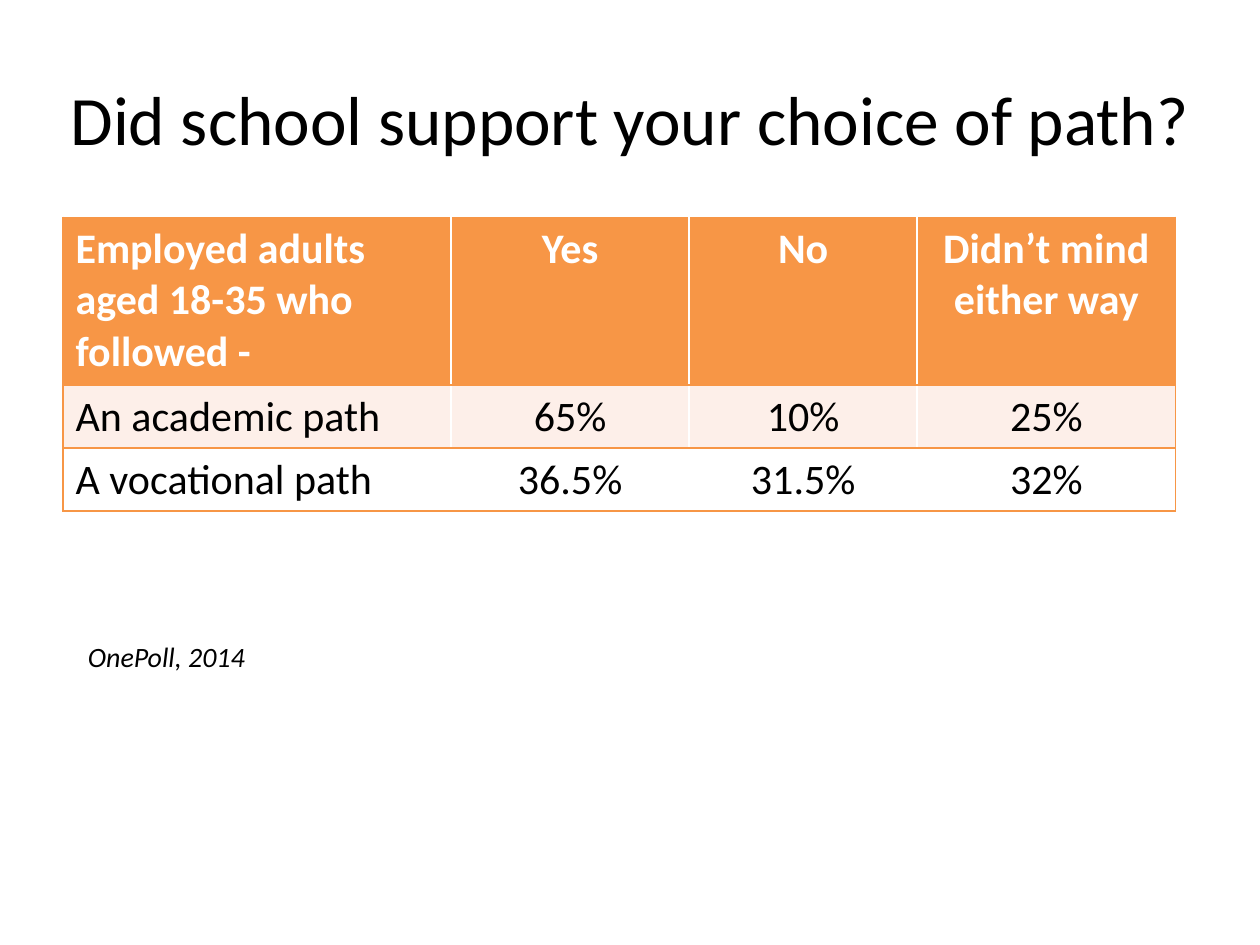
from dataclasses import dataclass

from lxml import etree
from pptx import Presentation
from pptx.dml.color import RGBColor
from pptx.enum.text import MSO_ANCHOR, PP_ALIGN
from pptx.oxml.ns import qn
from pptx.util import Emu, Inches, Pt

LEFT = PP_ALIGN.LEFT
CENTER = PP_ALIGN.CENTER
TOP = MSO_ANCHOR.TOP
MIDDLE = MSO_ANCHOR.MIDDLE

SLIDE_WIDTH = Inches(10)
SLIDE_HEIGHT = Inches(7.5)
FONT_NAME = "Calibri"
COLORS = {
    "orange": "F79646",
    "tint": "FDEFE9",
    "white": "FFFFFF",
    "black": "000000",
}


@dataclass(frozen=True)
class Area:
    left: float
    top: float
    width: float
    height: float

    def lengths(self) -> tuple[Emu, Emu, Emu, Emu]:
        return (
            Emu(round(self.left * SLIDE_WIDTH)),
            Emu(round(self.top * SLIDE_HEIGHT)),
            Emu(round(self.width * SLIDE_WIDTH)),
            Emu(round(self.height * SLIDE_HEIGHT)),
        )


@dataclass(frozen=True)
class TextBlock:
    text: str
    area: Area
    size: float
    alignment: PP_ALIGN
    anchor: MSO_ANCHOR
    italic: bool = False


@dataclass(frozen=True)
class SurveyRow:
    cells: tuple[str, ...]
    height: float
    fill: str
    color: str
    bold: bool = False


TEXT_BLOCKS = (
    TextBlock("Did school support your choice of path?",
              Area(0, 0.04, 1, 0.17), 39.6, CENTER, MIDDLE),
    TextBlock("OnePoll, 2014",
              Area(0.06, 0.67, 0.52, 0.05), 16, LEFT, TOP, italic=True),
)
TABLE_AREA = Area(0.05, 0.23, 0.88, 0.31)
COLUMN_WIDTHS = (3.08, 1.89, 1.81, 2.05)
SURVEY_ROWS = (
    SurveyRow(("Employed adults aged 18-35 who followed -", "Yes", "No",
               "Didn’t mind either way"), 1.33, "orange", "white", bold=True),
    SurveyRow(("An academic path", "65%", "10%", "25%"), 0.5, "tint", "black"),
    SurveyRow(("A vocational path", "36.5%", "31.5%", "32%"), 0.5, "white", "black"),
)


def style_paragraph(paragraph, size: float, color: str, alignment: PP_ALIGN,
                    bold: bool = False, italic: bool = False) -> None:
    paragraph.alignment = alignment
    font = paragraph.font
    font.name = FONT_NAME
    font.size = Pt(size)
    font.bold = bold
    font.italic = italic
    font.color.rgb = RGBColor.from_string(COLORS[color])


def add_text(slide, block: TextBlock) -> None:
    text_frame = slide.shapes.add_textbox(*block.area.lengths()).text_frame
    text_frame.word_wrap = True
    text_frame.vertical_anchor = block.anchor
    text_frame.text = block.text
    style_paragraph(text_frame.paragraphs[0], block.size, "black",
                    block.alignment, italic=block.italic)


def add_borders(cell, sides: str) -> None:
    properties = cell._tc.get_or_add_tcPr()
    for position, side in enumerate(sides):
        line = etree.Element(qn(f"a:ln{side}"), w=str(Pt(1)))
        fill = etree.SubElement(line, qn("a:solidFill"))
        etree.SubElement(fill, qn("a:srgbClr"), val=COLORS["orange"])
        properties.insert(position, line)


def add_survey_table(slide) -> None:
    table = slide.shapes.add_table(
        len(SURVEY_ROWS), len(COLUMN_WIDTHS), *TABLE_AREA.lengths()).table
    for column, width in zip(table.columns, COLUMN_WIDTHS):
        column.width = Inches(width)
    last = len(COLUMN_WIDTHS) - 1
    for row, survey_row in zip(table.rows, SURVEY_ROWS):
        row.height = Inches(survey_row.height)
        for index, text in enumerate(survey_row.cells):
            cell = row.cells[index]
            cell.text = text
            cell.fill.solid()
            cell.fill.fore_color.rgb = RGBColor.from_string(COLORS[survey_row.fill])
            style_paragraph(cell.text_frame.paragraphs[0], 24, survey_row.color,
                            CENTER if index else LEFT, bold=survey_row.bold)
            add_borders(cell, {0: "LTB", last: "RTB"}.get(index, "TB"))


def main() -> None:
    presentation = Presentation()
    presentation.slide_width = SLIDE_WIDTH
    presentation.slide_height = SLIDE_HEIGHT
    slide = presentation.slides.add_slide(presentation.slide_layouts[6])
    for block in TEXT_BLOCKS:
        add_text(slide, block)
    add_survey_table(slide)
    presentation.save("out.pptx")


if __name__ == "__main__":
    main()
